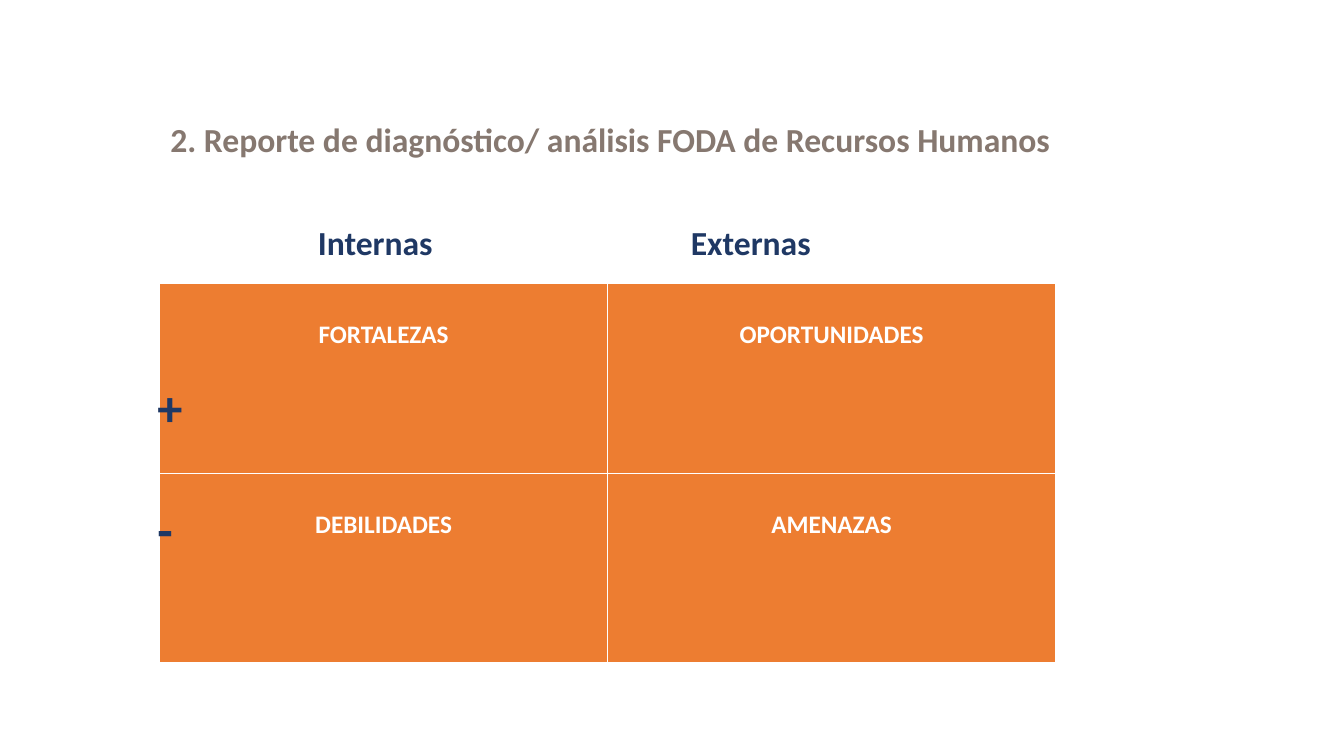
"""Build the SWOT slide of the human resources report."""
from pptx import Presentation
from pptx import util as u
from pptx.dml import color
from pptx.enum import text


def rgb(value):
    return color.RGBColor.from_string(value)


class SwotSlide:
    font = "Calibri"
    taupe, navy, orange, white = "867870", "1F3864", "ED7D31", "FFFFFF"

    def __init__(self, presentation):
        self.slide = presentation.slides.add_slide(presentation.slide_layouts[5])

    def add_words(self, paragraph, words, size, ink, align=text.PP_ALIGN.LEFT):
        paragraph.alignment = align
        run = paragraph.add_run()
        run.text = words
        run.font.name = self.font
        run.font.size = u.Pt(size)
        run.font.bold = True
        run.font.color.rgb = rgb(ink)

    def title(self, words, left, top, width, height):
        shape = self.slide.shapes.title
        shape.left, shape.top = u.Pt(left), u.Pt(top)
        shape.width, shape.height = u.Pt(width), u.Pt(height)
        frame = shape.text_frame
        frame.auto_size = text.MSO_AUTO_SIZE.NONE
        frame.vertical_anchor = text.MSO_ANCHOR.TOP
        self.add_words(frame.paragraphs[0], words, 24, self.taupe)

    def label(self, lines, left, top, width, height, size, gap=0):
        shape = self.slide.shapes.add_textbox(
            u.Pt(left), u.Pt(top), u.Pt(width), u.Pt(height))
        frame = shape.text_frame
        frame.word_wrap = True
        for index, words in enumerate(lines):
            paragraph = frame.add_paragraph() if index else frame.paragraphs[0]
            paragraph.space_before = u.Pt(gap if index else 0)
            self.add_words(paragraph, words, size, self.navy)

    def matrix(self, rows, left, top, column_width, row_heights):
        columns = len(rows[0])
        table = self.slide.shapes.add_table(
            len(rows), columns, u.Pt(left), u.Pt(top),
            u.Pt(column_width * columns), u.Pt(sum(row_heights))).table
        table.horz_banding = False
        for row, names in enumerate(rows):
            table.rows[row].height = u.Pt(row_heights[row])
            for column, name in enumerate(names):
                table.columns[column].width = u.Pt(column_width)
                cell = table.cell(row, column)
                cell.fill.solid()
                cell.fill.fore_color.rgb = rgb(self.orange)
                cell.margin_top = u.Pt(25.6)
                self.add_words(cell.text_frame.paragraphs[0], name, 18,
                               self.white, text.PP_ALIGN.CENTER)


def main():
    presentation = Presentation()
    presentation.slide_width, presentation.slide_height = u.Pt(960), u.Pt(540)
    swot = SwotSlide(presentation)
    swot.title("2. Reporte de diagnóstico/ análisis FODA de Recursos Humanos",
               114.5, 81.4, 751, 36)
    swot.matrix([["FORTALEZAS", "OPORTUNIDADES"], ["DEBILIDADES", "AMENAZAS"]],
                114, 202.5, 320, [136, 134.5])
    swot.label(["+", "-"], 105.3, 265, 68, 138, 36, gap=44)
    for heading, left in [("Internas", 220), ("Externas", 486.4)]:
        swot.label([heading], left, 154.8, 150, 36, 24)
    presentation.save("out.pptx")


if __name__ == "__main__":
    main()
